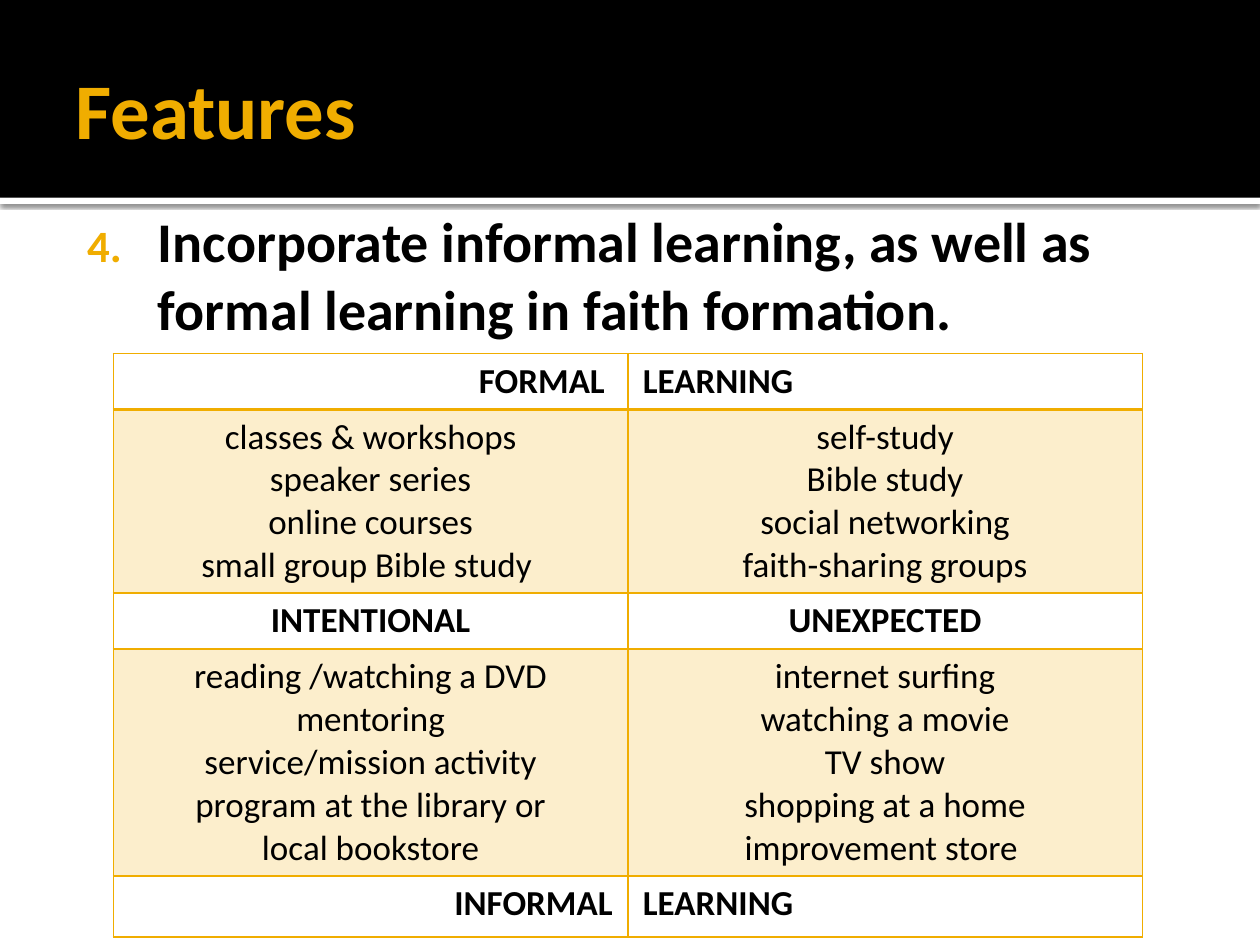
import dataclasses
import typing

import pptx
import pptx.dml.color
import pptx.enum.shapes
import pptx.enum.text
import pptx.oxml
import pptx.oxml.ns
import pptx.util

Pt = pptx.util.Pt
RGB = pptx.dml.color.RGBColor
Align = pptx.enum.text.PP_ALIGN
Anchor = pptx.enum.text.MSO_ANCHOR

GOLD = RGB(0xF0, 0xAD, 0x00)
BLACK = RGB(0, 0, 0)
WHITE = RGB(255, 255, 255)
FONT = "Calibri"
NS = pptx.oxml.ns.nsdecls("a")


@dataclasses.dataclass
class Band:
    top: float
    height: float
    color: RGB
    shadow: bool = False


@dataclasses.dataclass
class Row:
    height: float
    left: list[str]
    right: list[str]
    head: bool = False
    split: bool = False  # the two cells read as one phrase across the middle


BANDS = [Band(113, 3.6, WHITE, shadow=True), Band(0, 113, BLACK)]

ROWS = [
    Row(32, ["FORMAL "], ["LEARNING"], head=True, split=True),
    Row(105,
        ["classes & workshops", "speaker series", "online courses",
         "small group Bible study "],
        ["self-study", "Bible study", "social networking",
         "faith-sharing groups"]),
    Row(32, ["INTENTIONAL"], ["UNEXPECTED"], head=True),
    Row(129.6,
        ["reading /watching a DVD", "mentoring", "service/mission activity",
         "program at the library or", "local bookstore"],
        ["internet surfing", "watching a movie", "TV show",
         "shopping at a home", "improvement store "]),
    Row(35, ["INFORMAL"], ["LEARNING"], head=True, split=True),
]


def add(parent: typing.Any, xml: str) -> None:
    parent.append(pptx.oxml.parse_xml(xml))


def write(frame: typing.Any, lines: list[str], *, size: float,
          color: RGB = BLACK, bold: bool = False,
          align: Align = Align.LEFT) -> None:
    for i, line in enumerate(lines):
        para = frame.paragraphs[0] if i == 0 else frame.add_paragraph()
        para.alignment = align
        run = para.add_run()
        run.text = line
        run.font.name = FONT
        run.font.size = Pt(size)
        run.font.bold = bold
        run.font.color.rgb = color


def inset(item: typing.Any, left: float, top: float, right: float,
          bottom: float) -> None:
    item.margin_left, item.margin_top = Pt(left), Pt(top)
    item.margin_right, item.margin_bottom = Pt(right), Pt(bottom)


def draw_band(slide: typing.Any, band: Band, order: int) -> None:
    shape = slide.shapes.add_shape(
        pptx.enum.shapes.MSO_SHAPE.RECTANGLE,
        0, Pt(band.top), Pt(720), Pt(band.height))
    shape.shadow.inherit = False
    shape.fill.solid()
    shape.fill.fore_color.rgb = band.color
    shape.line.fill.background()
    if band.shadow:
        effect = shape._element.spPr.find(pptx.oxml.ns.qn("a:effectLst"))
        add(effect, f'<a:outerShdw {NS} blurRad="{Pt(2.5)}" dist="{Pt(0.8)}" '
            'dir="5400000" algn="tl" rotWithShape="0">'
            '<a:srgbClr val="000000"><a:alpha val="60000"/></a:srgbClr>'
            '</a:outerShdw>')
    # Bands lie behind the title
    slide.shapes._spTree.insert(2 + order, shape._element)


def draw_cell(cell: typing.Any, lines: list[str], row: Row, align: Align,
              edges: dict[str, float]) -> None:
    inset(cell, 8.64, 3.6, 8.64, 3.6)
    write(cell.text_frame, lines, size=20, bold=row.head, align=align)
    props = cell._tc.get_or_add_tcPr()
    for side, width in edges.items():
        add(props, f'<a:ln{side} {NS} w="{Pt(width)}"><a:solidFill>'
            f'<a:srgbClr val="{GOLD}"/></a:solidFill></a:ln{side}>')
    if row.head:
        cell.fill.background()
    else:
        add(props, f'<a:solidFill {NS}><a:srgbClr val="{GOLD}">'
            '<a:alpha val="20000"/></a:srgbClr></a:solidFill>')


def draw_table(slide: typing.Any, rows: list[Row]) -> None:
    table = slide.shapes.add_table(
        len(rows), 2, Pt(64.8), Pt(202), Pt(588),
        Pt(sum(row.height for row in rows))).table
    table.first_row = table.horz_banding = False
    for col in table.columns:
        col.width = Pt(294)
    for i, row in enumerate(rows):
        table.rows[i].height = Pt(row.height)
        edges = {"L": 1, "R": 1, "T": 2 if i == 1 else 1,
                 "B": 2 if i == 0 else 1}
        pair = (Align.RIGHT, Align.LEFT) if row.split else (Align.CENTER,) * 2
        for j, lines in enumerate((row.left, row.right)):
            draw_cell(table.cell(i, j), lines, row, pair[j], edges)


def main() -> None:
    deck = pptx.Presentation()
    deck.slide_width, deck.slide_height = Pt(720), Pt(540)
    slide = deck.slides.add_slide(deck.slide_layouts[5])

    # Header
    for order, band in enumerate(BANDS):
        draw_band(slide, band, order)
    title = slide.shapes.title
    title.left, title.top = Pt(36), Pt(12.24)
    title.width, title.height = Pt(648), Pt(98.64)
    frame = title.text_frame
    frame.vertical_anchor = Anchor.MIDDLE
    inset(frame, 7.2, 3.6, 3.6, 3.6)
    write(frame, ["Features"], size=45, color=GOLD, bold=True)

    # Numbered statement
    box = slide.shapes.add_textbox(Pt(36), Pt(111), Pt(648), Pt(408))
    frame = box.text_frame
    frame.word_wrap = True
    inset(frame, 4.32, 7.2, 7.2, 3.6)
    props = frame.paragraphs[0]._p.get_or_add_pPr()
    props.set("marL", str(Pt(50)))
    props.set("indent", str(Pt(-40.5)))
    add(props, f'<a:buClr {NS}><a:srgbClr val="{GOLD}"/></a:buClr>')
    add(props, f'<a:buSzPct {NS} val="80000"/>')
    add(props, f'<a:buFont {NS} typeface="{FONT}"/>')
    add(props, f'<a:buAutoNum {NS} type="arabicPeriod" startAt="4"/>')
    write(frame, ["Incorporate informal learning, as well as formal learning "
                  "in faith formation."], size=32, bold=True)

    # Kinds of learning
    draw_table(slide, ROWS)
    deck.save("out.pptx")


if __name__ == "__main__":
    main()
